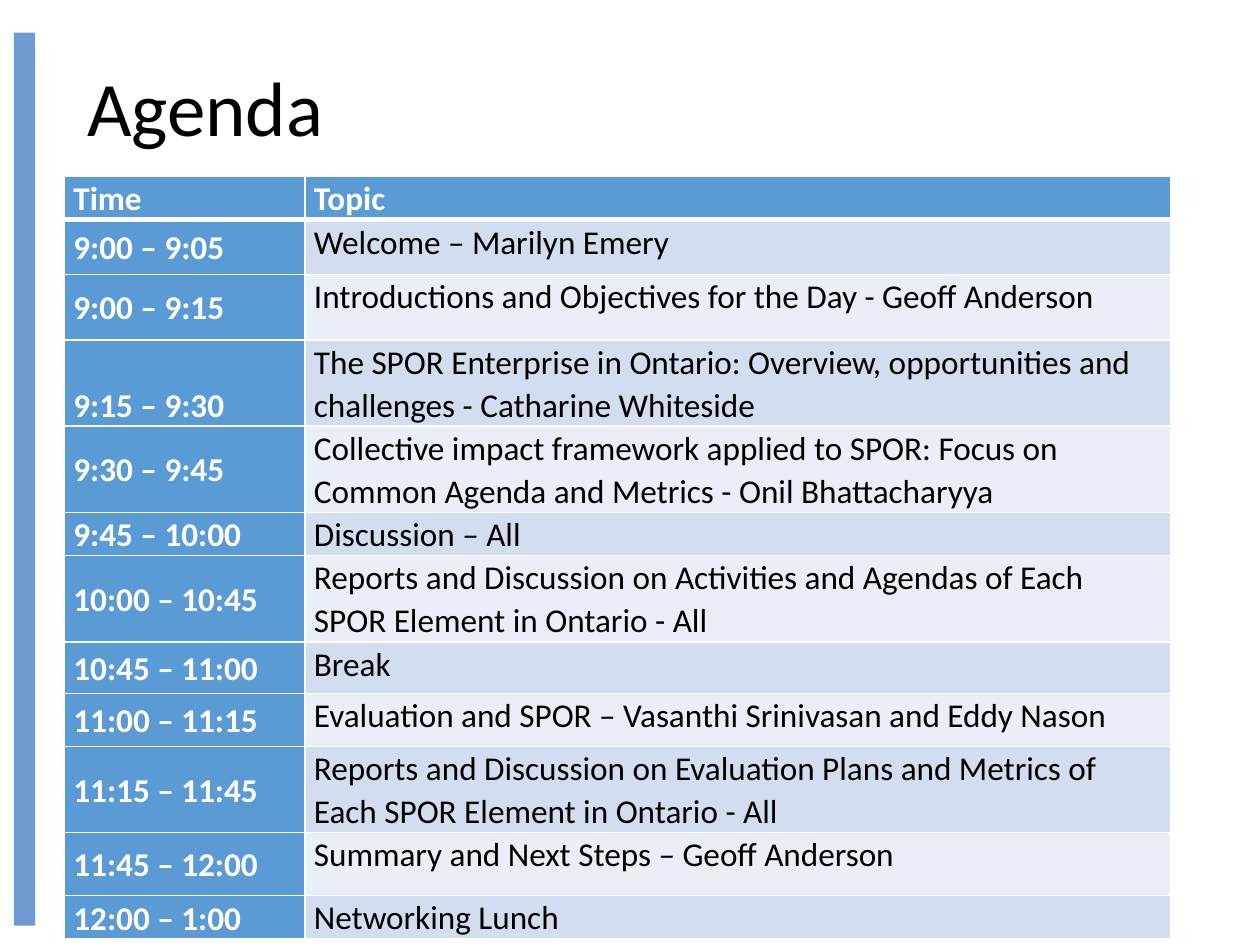
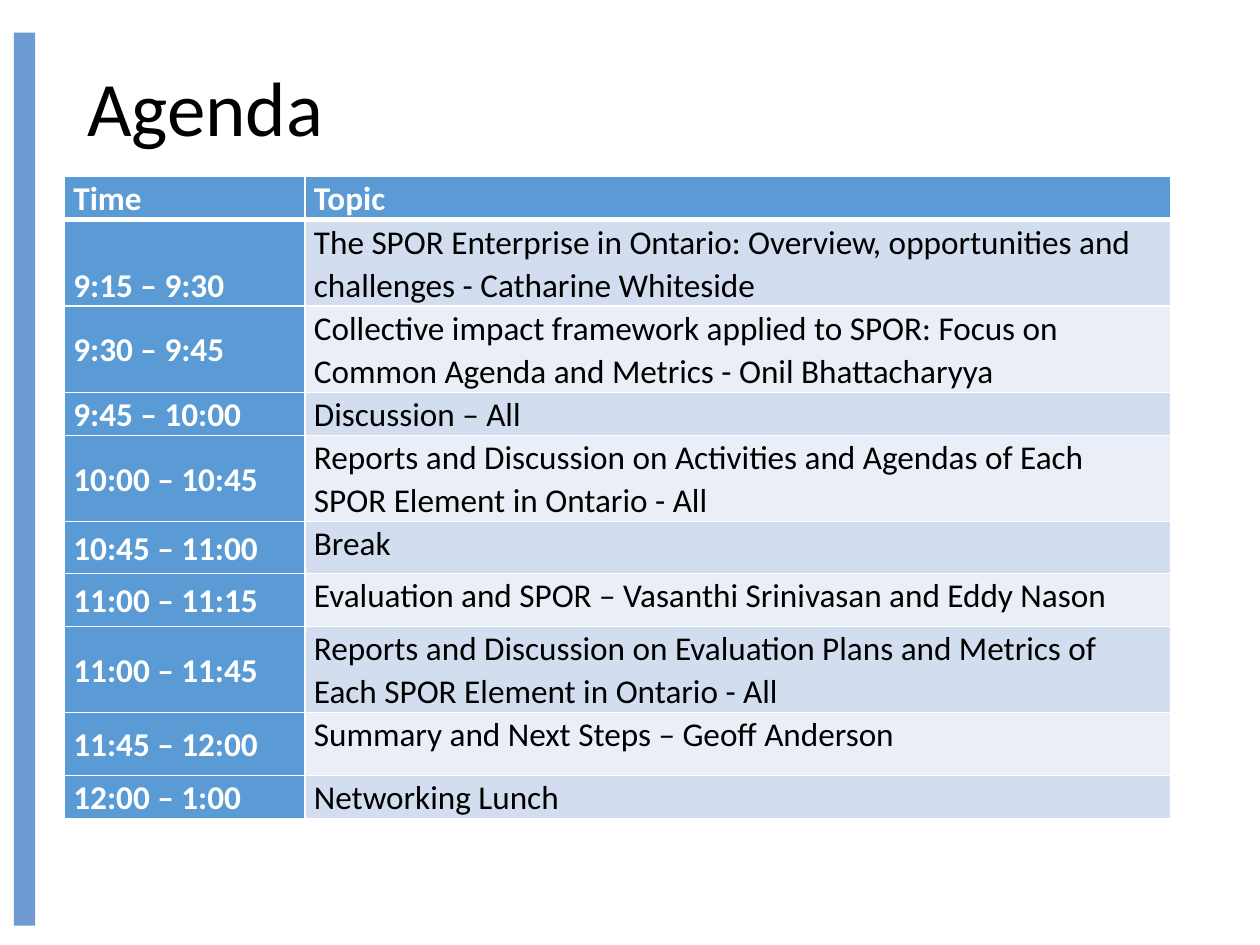
from lxml.etree import SubElement
from pptx import Presentation
from pptx.dml.color import RGBColor
from pptx.enum.shapes import MSO_SHAPE
from pptx.enum.text import MSO_ANCHOR, PP_ALIGN
from pptx.oxml.ns import qn
from pptx.util import Cm, Pt

THEME = {
    "font": "Calibri",
    "title_size": Pt(44),
    "table_size": Pt(19),
    "black": RGBColor.from_string("000000"),
    "white": RGBColor.from_string("FFFFFF"),
    "bar": RGBColor.from_string("6E9BD2"),
    "header": RGBColor.from_string("5B9BD5"),
    "bands": [RGBColor.from_string("D2DEEF"), RGBColor.from_string("EAEFF7")],
}

# Row height in cm, time, topic, anchors of the time and topic cells
TOP, MIDDLE, BOTTOM = MSO_ANCHOR.TOP, MSO_ANCHOR.MIDDLE, MSO_ANCHOR.BOTTOM
heading = (0.84, "Time", "Topic", TOP, TOP)
sessions = [
    (1.1, "9:00 – 9:05", "Welcome – Marilyn Emery", MIDDLE, TOP),
    (1.32, "9:00 – 9:15", "Introductions and Objectives for the Day - Geoff Anderson", MIDDLE, TOP),
    (1.68, "9:15 – 9:30", "The SPOR Enterprise in Ontario: Overview, opportunities and "
     "challenges - Catharine Whiteside", BOTTOM, MIDDLE),
    (1.68, "9:30 – 9:45", "Collective impact framework applied to SPOR: Focus on "
     "Common Agenda and Metrics - Onil Bhattacharyya", MIDDLE, TOP),
    (0.84, "9:45 – 10:00", "Discussion – All", TOP, TOP),
    (1.68, "10:00 – 10:45", "Reports and Discussion on Activities and Agendas of Each "
     "SPOR Element in Ontario - All", MIDDLE, TOP),
    (1.04, "10:45 – 11:00", "Break", MIDDLE, TOP),
    (1.07, "11:00 – 11:15", "Evaluation and SPOR – Vasanthi Srinivasan and Eddy Nason", MIDDLE, TOP),
    (1.68, "11:15 – 11:45", "Reports and Discussion on Evaluation Plans and Metrics of "
     "Each SPOR Element in Ontario - All", MIDDLE, TOP),
    (1.27, "11:45 – 12:00", "Summary and Next Steps – Geoff Anderson", MIDDLE, TOP),
    (0.84, "12:00 – 1:00", "Networking Lunch", MIDDLE, TOP),
]
later_sessions = [
    (height, time.replace("11:15 – 11:45", "11:00 – 11:45"), *rest)
    for height, time, *rest in sessions[2:]
]


def set_format(target, values):
    for name, value in values.items():
        setattr(target, name, value)


def set_borders(cell, widths):
    tc_pr = cell._tc.get_or_add_tcPr()
    for i, (side, width) in enumerate(widths.items()):
        ln = SubElement(tc_pr, qn(f"a:{side}"), w=str(Pt(width)))
        fill = SubElement(ln, qn("a:solidFill"))
        SubElement(fill, qn("a:srgbClr"), val=str(THEME["white"]))
        tc_pr.insert(i, ln)


prs = Presentation()
prs.slide_width, prs.slide_height = Cm(25.4), Cm(19.05)
layout = prs.slide_layouts.get_by_name("Title Only")

for slide_no, agenda in enumerate([sessions, later_sessions]):
    s = prs.slides.add_slide(layout)

    # Side bar, moved to the layout so that every slide shows it
    if slide_no == 0:
        bar = s.shapes.add_shape(MSO_SHAPE.RECTANGLE, Cm(0.28), Cm(0.66), Cm(0.43), Cm(18))
        bar.shadow.inherit = False
        bar.fill.solid()
        bar.fill.fore_color.rgb = THEME["bar"]
        bar.line.fill.background()
        layout.shapes.element.insert(2, bar.element)

    # Title
    title = s.shapes.title
    set_format(title, {"left": Cm(1.5), "top": Cm(0.41), "width": Cm(21.9), "height": Cm(3.68)})
    tf = title.text_frame
    tf.text = "Agenda"
    tf.vertical_anchor = MIDDLE
    p = tf.paragraphs[0]
    set_format(p, {"alignment": PP_ALIGN.LEFT, "line_spacing": 0.9})
    set_format(p.font, {"name": THEME["font"], "size": THEME["title_size"]})
    p.font.color.rgb = THEME["black"]

    # Agenda table
    rows = [heading, *agenda]
    total = sum(row[0] for row in rows)
    table = s.shapes.add_table(len(rows), 2, Cm(1.3), Cm(3.56), Cm(22.3), Cm(total)).table
    table.first_col = True
    table.columns[0].width, table.columns[1].width = Cm(4.85), Cm(17.45)

    for i, (height, time, topic, *anchors) in enumerate(rows):
        table.rows[i].height = Cm(height)
        for j, text in enumerate([time, topic]):
            cell = table.cell(i, j)
            is_head = i == 0 or j == 0
            set_format(cell, {
                "text": text, "vertical_anchor": anchors[j],
                "margin_left": Cm(0.18), "margin_right": Cm(0.18),
                "margin_top": 0, "margin_bottom": 0,
            })
            cell.fill.solid()
            cell.fill.fore_color.rgb = THEME["header"] if is_head else THEME["bands"][(i - 1) % 2]
            set_borders(cell, {"lnL": 1, "lnR": 1, "lnT": 3 if i == 1 else 1,
                               "lnB": 3 if i == 0 else 1})
            p = cell.text_frame.paragraphs[0]
            p.line_spacing = 1.07
            r = p.runs[0]
            set_format(r.font, {"name": THEME["font"], "size": THEME["table_size"], "bold": is_head})
            r.font.color.rgb = THEME["white" if is_head else "black"]

prs.save("out.pptx")
